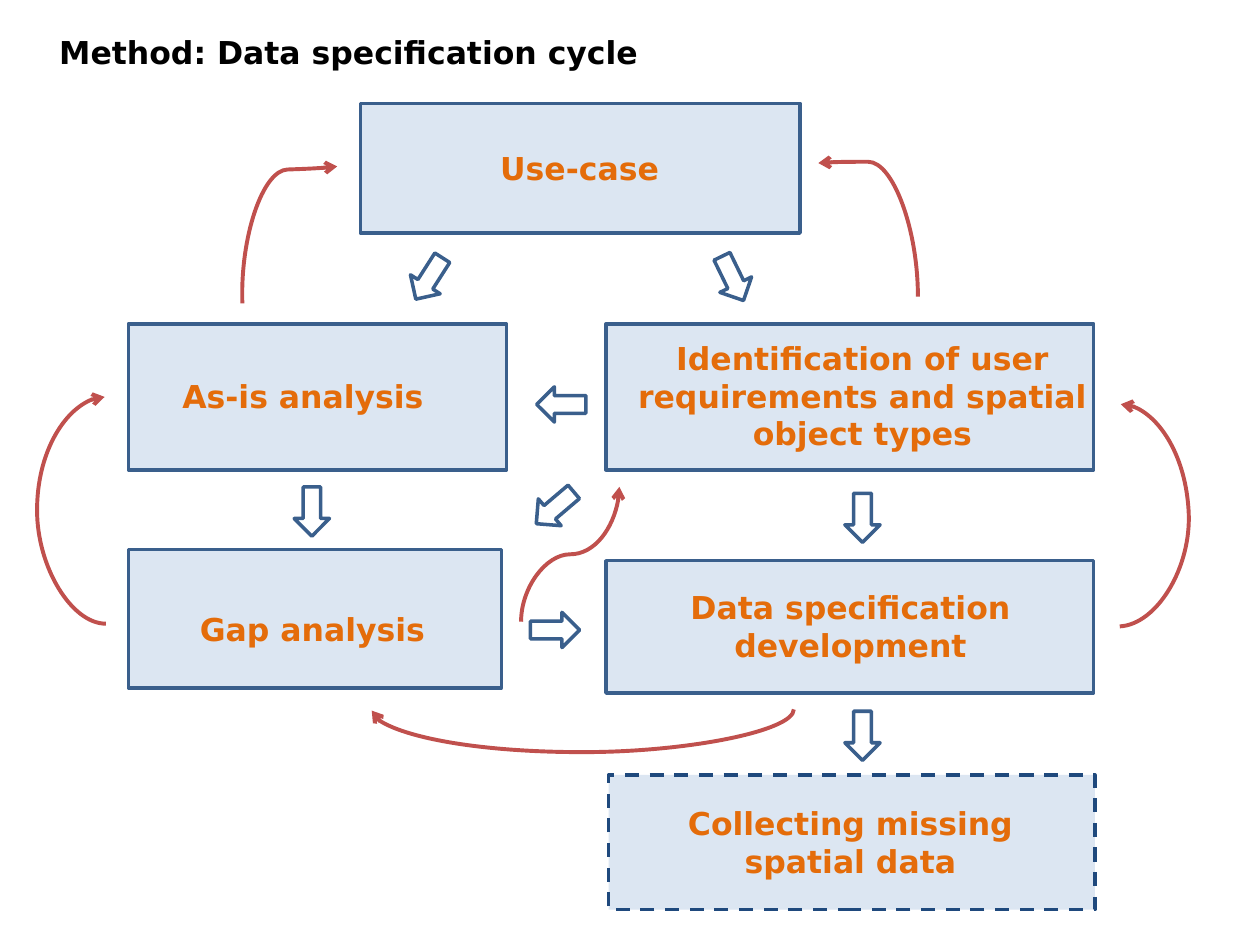
"""Build the data specification cycle slide."""
from typing import NamedTuple

import lxml.etree
import pptx
import pptx.dml.color
import pptx.enum.dml
import pptx.enum.shapes
import pptx.enum.text
import pptx.oxml.ns
import pptx.util

Inches = pptx.util.Inches
RGBColor = pptx.dml.color.RGBColor
Align = pptx.enum.text.PP_ALIGN
Preset = pptx.enum.shapes.MSO_SHAPE
qn = pptx.oxml.ns.qn

BLACK = RGBColor(0x00, 0x00, 0x00)
WHITE = RGBColor(0xFF, 0xFF, 0xFF)
PALE_BLUE = RGBColor(0xDC, 0xE6, 0xF2)
STEEL_BLUE = RGBColor(0x3A, 0x5F, 0x8C)
NAVY = RGBColor(0x1F, 0x49, 0x7D)
ORANGE = RGBColor(0xE4, 0x6C, 0x0A)
RED = RGBColor(0xC0, 0x50, 0x4D)
FONT = "DejaVu Sans"
ARROW_WIDTH, ARROW_HEIGHT = 0.39, 0.28


class Area(NamedTuple):
    left: float
    top: float
    width: float
    height: float

    def lengths(self) -> list:
        return [Inches(value) for value in self]


class Step(NamedTuple):
    text: str
    area: Area
    label: Area
    optional: bool = False


class BlockArrow(NamedTuple):
    left: float
    top: float
    rotation: float


class Feedback(NamedTuple):
    area: Area
    rotation: int
    flips: str
    bend: float


STEPS = [
    Step("Gap analysis", Area(1.02, 4.36, 2.96, 1.1), Area(1.3, 4.79, 2.36, 0.4)),
    Step("Data specification development",
         Area(4.81, 4.45, 3.87, 1.05), Area(5.16, 4.62, 3.18, 0.71)),
    Step("Identification of user requirements and spatial object types",
         Area(4.81, 2.57, 3.87, 1.16), Area(4.91, 2.64, 3.87, 1.01)),
    Step("Use-case", Area(2.86, 0.82, 3.49, 1.03), Area(3.5, 1.13, 2.2, 0.4)),
    Step("As-is analysis", Area(1.02, 2.57, 3, 1.16), Area(1.14, 2.94, 2.53, 0.4)),
    Step("Collecting missing spatial data",
         Area(4.83, 6.15, 3.86, 1.07), Area(5.16, 6.33, 3.18, 0.71), optional=True),
]
BLOCK_ARROWS = [
    BlockArrow(2.28, 3.92, 90),
    BlockArrow(6.65, 3.97, 90),
    BlockArrow(4.26, 3.07, 180),
    BlockArrow(4.21, 4.86, 0),
    BlockArrow(4.21, 3.89, 139.6),
    BlockArrow(6.65, 5.7, 90),
    BlockArrow(3.21, 2.07, 122.6),
    BlockArrow(5.62, 2.07, 64),
]
FEEDBACKS = [
    Feedback(Area(1.77, 1.47, 1.06, 0.79), 88, "HV", 0.99),
    Feedback(Area(6.36, 1.43, 1.06, 0.79), 270, "V", 1.01),
    Feedback(Area(0.83, 3.15, 0.01, 1.8), 180, "", 55.5),
    Feedback(Area(3.99, 4.01, 1.07, 0.78), 90, "HV", 0.5),
    Feedback(Area(4.62, 3.96, 0.01, 3.35), 90, "", 34.5),
    Feedback(Area(8.84, 3.21, 0.1, 1.76), 357, "V", 5.94),
]


def write_text(box, text: str, *, color: RGBColor, align: Align) -> None:
    frame = box.text_frame
    frame.word_wrap = True
    frame.auto_size = pptx.enum.text.MSO_AUTO_SIZE.SHAPE_TO_FIT_TEXT
    frame.vertical_anchor = pptx.enum.text.MSO_ANCHOR.TOP
    para = frame.paragraphs[0]
    para.alignment = align
    span = para.add_run()
    span.text = text
    span.font.name = FONT
    span.font.size = pptx.util.Pt(18)
    span.font.bold = True
    span.font.color.rgb = color


def draw_shape(slide, preset: Preset, area: Area, fill: RGBColor, line: RGBColor):
    shape = slide.shapes.add_shape(preset, *area.lengths())
    shape.shadow.inherit = False
    shape.fill.solid()
    shape.fill.fore_color.rgb = fill
    shape.line.color.rgb = line
    shape.line.width = pptx.util.Pt(2)
    return shape


def draw_step(slide, step: Step) -> None:
    line = NAVY if step.optional else STEEL_BLUE
    shape = draw_shape(slide, Preset.RECTANGLE, step.area, PALE_BLUE, line)
    if step.optional:
        shape.line.dash_style = pptx.enum.dml.MSO_LINE.DASH


def draw_label(slide, step: Step) -> None:
    box = slide.shapes.add_textbox(*step.label.lengths())
    write_text(box, step.text, color=ORANGE, align=Align.CENTER)


def draw_block_arrow(slide, arrow: BlockArrow) -> None:
    area = Area(arrow.left, arrow.top, ARROW_WIDTH, ARROW_HEIGHT)
    shape = draw_shape(slide, Preset.RIGHT_ARROW, area, WHITE, STEEL_BLUE)
    shape.rotation = arrow.rotation


def draw_feedback(slide, feedback: Feedback) -> None:
    left, top, width, height = feedback.area.lengths()
    connector = slide.shapes.add_connector(
        pptx.enum.shapes.MSO_CONNECTOR.CURVE, left, top, left + width, top + height)
    connector.line.color.rgb = RED
    connector.line.width = pptx.util.Pt(2.25)
    properties = connector._element.spPr
    frame = properties.find(qn("a:xfrm"))
    frame.set("rot", str(feedback.rotation * 60000))
    for axis in feedback.flips:
        frame.set(f"flip{axis}", "1")
    guides = properties.find(qn("a:prstGeom")).find(qn("a:avLst"))
    lxml.etree.SubElement(guides, qn("a:gd"), name="adj1",
                          fmla=f"val {round(feedback.bend * 100000)}")
    lxml.etree.SubElement(properties.find(qn("a:ln")), qn("a:tailEnd"), type="arrow")
    lxml.etree.SubElement(properties, qn("a:effectLst"))


def main() -> None:
    deck = pptx.Presentation()
    deck.slide_width, deck.slide_height = Inches(10), Inches(7.5)
    slide = deck.slides.add_slide(deck.slide_layouts.get_by_name("Title Only"))
    title = slide.shapes.title
    title.left, title.top, title.width, title.height = Area(0.37, 0.21, 8.66, 0.4).lengths()
    write_text(title, "Method: Data specification cycle", color=BLACK, align=Align.LEFT)
    for draw, items in ((draw_step, STEPS), (draw_label, STEPS),
                        (draw_block_arrow, BLOCK_ARROWS), (draw_feedback, FEEDBACKS)):
        for item in items:
            draw(slide, item)
    deck.save("out.pptx")


if __name__ == "__main__":
    main()
